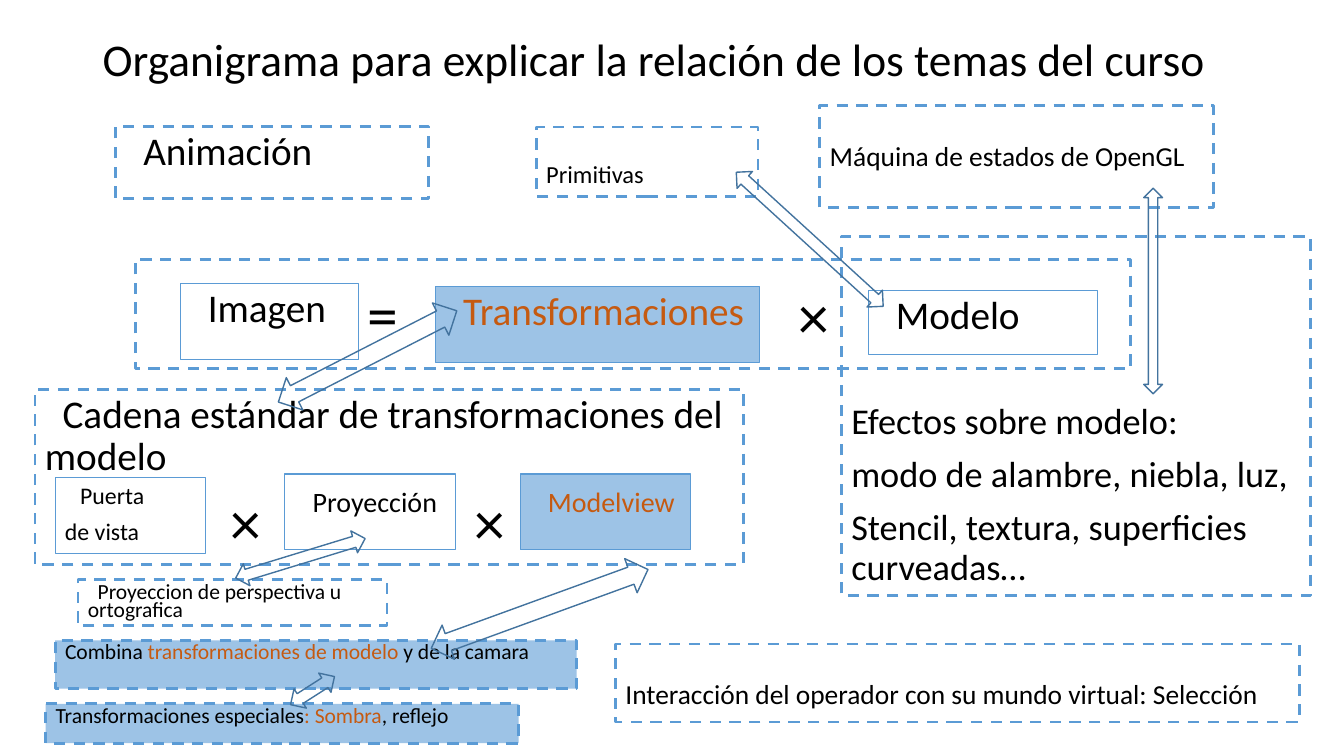
from pptx import Presentation
from pptx.dml.color import RGBColor
from pptx.enum.dml import MSO_LINE
from pptx.enum.shapes import MSO_SHAPE as SHAPE
from pptx.enum.text import MSO_ANCHOR as ANCHOR, PP_ALIGN as ALIGN
from pptx.util import Inches, Pt

COLORS = {"text": "000000", "accent": "C55A11", "fill": "9DC3E6",
          "border": "5B9BD5", "arrow": "43739E"}

prs = Presentation()
prs.slide_width, prs.slide_height = Inches(13.33), Inches(7.5)
slide = prs.slides.add_slide(prs.slide_layouts[6])


def place(kind, x, y, w, h, line, width):
    """Add an outlined, unfilled shape; lengths are percentages of the slide."""
    cw, rh = prs.slide_width / 100, prs.slide_height / 100
    sp = slide.shapes.add_shape(kind, round(x * cw), round(y * rh), round(w * cw), round(h * rh))
    sp.shadow.inherit = False
    sp.fill.background()
    if line:
        sp.line.color.rgb = RGBColor.from_string(COLORS[line])
        sp.line.width = Pt(width)
    else:
        sp.line.fill.background()
    return sp


def write(sp, paragraphs, size, spacing=0.9, indent=0, drop=0, gap=10):
    """Write paragraphs of (text, color) runs; indent, drop and gap are in points."""
    tf = sp.text_frame
    tf.word_wrap = True
    tf.vertical_anchor = ANCHOR.TOP
    tf.margin_top = Pt(3.6 + drop)
    for i, runs in enumerate(paragraphs):
        p = tf.paragraphs[0] if i == 0 else tf.add_paragraph()
        p.alignment = ALIGN.LEFT
        p.line_spacing = spacing
        p.space_before = Pt(gap if i else 0)
        if indent and i == 0:
            p._p.get_or_add_pPr().set("indent", str(Pt(indent)))
        for text, color in runs:
            r = p.add_run()
            r.text = text
            r.font.name = "Calibri"
            r.font.size = Pt(size)
            r.font.color.rgb = RGBColor.from_string(COLORS[color])


title = place(SHAPE.RECTANGLE, 6.9, 1.3, 86.2, 13.7, None, 0)
write(title, [[("Organigrama para explicar la relación de los temas del curso", "text")]], 32.4)
title.text_frame.vertical_anchor = ANCHOR.MIDDLE

# Solid boxes: the factors of both products
big = dict(size=28, indent=12.7)
small = dict(size=20, indent=12.7, drop=6.6)
gate = dict(size=17, spacing=0.7, indent=10.8, drop=4, gap=11.7)
factors = [
    ((32.4, 37.9, 24.1, 10), ["Transformaciones"], True, big),
    ((64.6, 38.4, 17.1, 8.5), ["Modelo"], False, big),
    ((13.4, 37.5, 13.3, 10), ["Imagen"], False, big),
    ((4.1, 63.2, 11.2, 10), ["Puerta", "de vista"], False, gate),
    ((21.2, 62.7, 12.7, 10), ["Proyección"], False, small),
    ((38.7, 62.7, 12.7, 10), ["Modelview"], True, small),
]
for box, lines, highlighted, style in factors:
    sp = place(SHAPE.RECTANGLE, *box, "border", 0.75)
    if highlighted:
        sp.fill.solid()
        sp.fill.fore_color.rgb = RGBColor.from_string(COLORS["fill"])
    color = "accent" if highlighted else "text"
    write(sp, [[(line, color)] for line in lines], **style)

for sign, x, y in [("=", 26.6, 36.9), ("×", 58.7, 37.2), ("×", 16.4, 64.5), ("×", 34.6, 64.5)]:
    sp = place(SHAPE.RECTANGLE, x, y, 4, 10.9, None, 0)
    write(sp, [[(sign, "text")]], 44)

# Dashed boxes: the course topics
note = dict(size=15.4, spacing=0.7)
topics = [
    ((8.6, 16.7, 23.3, 9.6), [[("Animación", "text")]], False, big),
    ((2.6, 51.5, 52.7, 23.2),
     [[("Cadena estándar de transformaciones del modelo", "text")]], False, big),
    ((62.6, 31.3, 34.9, 47.5),
     [[("Efectos sobre modelo:", "text")], [("modo de alambre, niebla, luz,", "text")],
      [("Stencil, textura, superficies curveadas…", "text")]], False,
     dict(size=25.9, drop=115.4)),
    ((45.8, 85.2, 50.9, 10.3),
     [[("Interacción del operador con su mundo virtual: Selección", "text")]], False,
     dict(size=19.6, spacing=0.7, drop=26.7)),
    ((61, 14, 29.3, 13.5), [[("Máquina de estados de OpenGL", "text")]], False,
     dict(size=19.6, spacing=0.7, drop=26.7)),
    ((39.9, 16.8, 16.5, 9.2), [[("Primitivas", "text")]], False,
     dict(size=17.5, spacing=0.7, drop=25)),
    ((5.8, 76.7, 23, 6.1),
     [[("Proyeccion de perspectiva u ortografica", "text")]], False, dict(note, indent=7)),
    ((4.1, 84.7, 38.8, 6.4),
     [[("Combina ", "text"), ("transformaciones de modelo ", "accent"),
       ("y de la camara", "text")]], True, note),
    ((3.4, 93.1, 35.2, 5.2),
     [[("Transformaciones especiales", "text"), (": Sombra", "accent"),
       (", reflejo", "text")]], True, note),
    ((10.1, 34.3, 74, 14.5), [], False, note),
]
for box, paragraphs, highlighted, style in topics:
    sp = place(SHAPE.RECTANGLE, *box, "border", 2)
    sp.line.dash_style = MSO_LINE.DASH
    if highlighted:
        sp.fill.solid()
        sp.fill.fore_color.rgb = RGBColor.from_string(COLORS["fill"])
    write(sp, paragraphs, **style)

# Double arrows: box, rotation, shaft share
arrows = [
    ((26, 33.9, 2.7, 26.5), 62.9, 0.265),
    ((38.8, 65.3, 2.7, 30.5), 70, 0.265),
    ((21.5, 64.9, 1.7, 17.9), 73, 0.265),
    ((59.4, 18.5, 1.7, 26.3), 312.4, 0.265),
    ((85.1, 24.9, 1.4, 27.2), 0, 0.655),
    ((22.4, 87.9, 1.7, 6.9), 57.4, 0.265),
]
for box, angle, shaft in arrows:
    sp = place(SHAPE.UP_DOWN_ARROW, *box, "arrow", 1)
    sp.rotation = angle
    sp.adjustments[0] = shaft
    sp.adjustments[1] = 0.5

prs.save("out.pptx")
